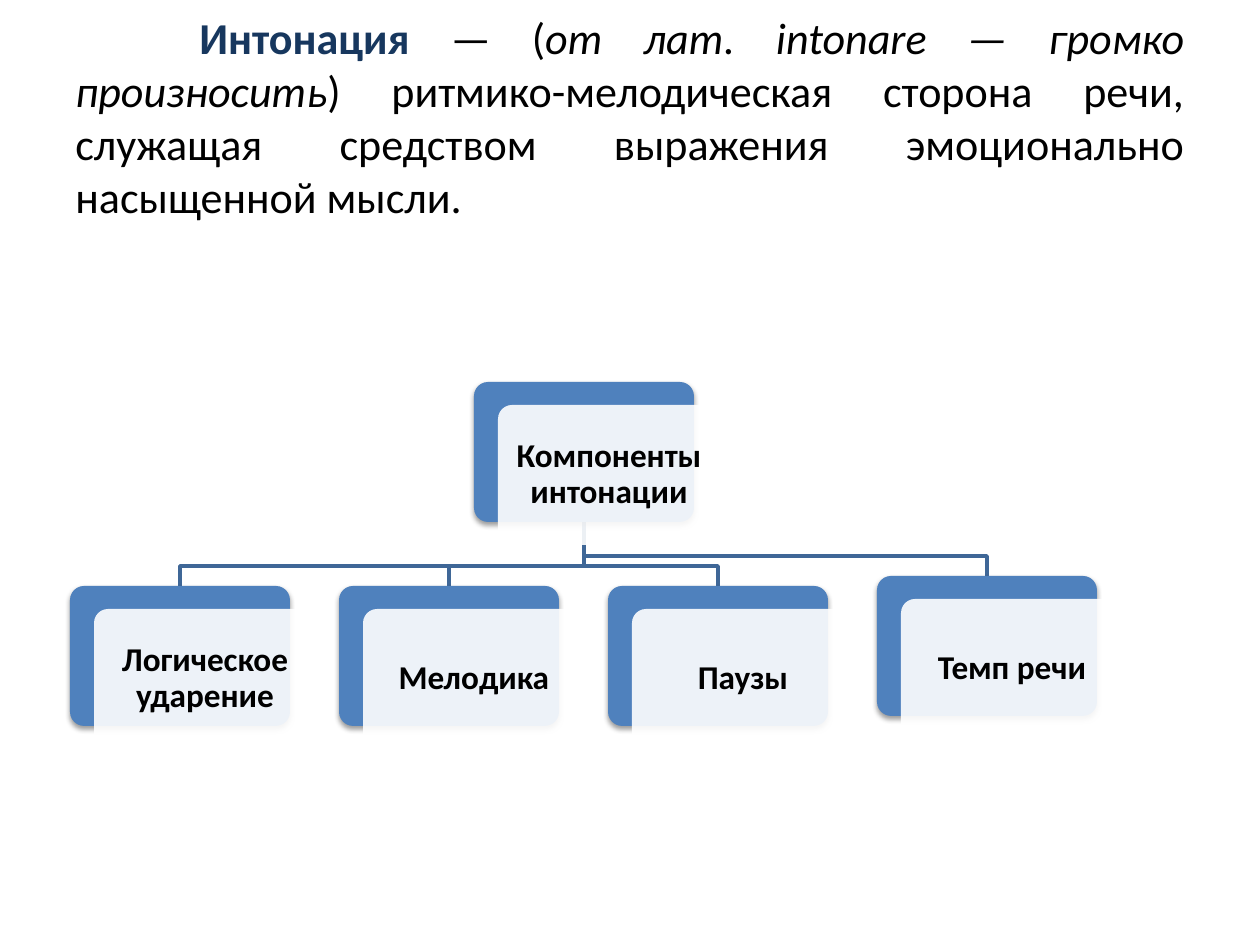
from dataclasses import dataclass

from pptx import Presentation
from pptx.dml.color import RGBColor
from pptx.enum.shapes import MSO_SHAPE
from pptx.enum.text import MSO_ANCHOR, PP_ALIGN
from pptx.oxml.ns import qn
from pptx.shapes.autoshape import Shape
from pptx.shapes.shapetree import GroupShapes
from pptx.slide import Slide
from pptx.util import Emu, Pt
from lxml import etree

ROUNDED = MSO_SHAPE.ROUNDED_RECTANGLE
MIDDLE = MSO_ANCHOR.MIDDLE
CENTER, JUSTIFY = PP_ALIGN.CENTER, PP_ALIGN.JUSTIFY

EMU_PER_PX = 914400 / 126
FONT = "Calibri"
COLORS = {
    "term": "17375E",
    "text": "000000",
    "card": "4F81BD",
    "face": "FFFFFF",
    "line": "3F6797",
    "shadow": "000000",
}
CARD_WIDTH, CARD_HEIGHT = 220, 140
BUS_GAP = 20


@dataclass
class Card:
    label: str
    left: int
    top: int

    @property
    def center(self) -> int:
        return self.left + CARD_WIDTH // 2


@dataclass
class Span:
    text: str
    color: str = "text"
    bold: bool = False
    italic: bool = False


DEFINITION = [
    Span("Интонация ", color="term", bold=True),
    Span("— ("),
    Span("от лат. intonare — громко произносить", italic=True),
    Span(") ритмико-мелодическая сторона речи, служащая средством "
         "выражения эмоционально насыщенной мысли."),
]
ROOT = Card("Компоненты интонации", 474, 382)
BRANCHES = [
    Card(label, 70 + 269 * index, top)
    for index, (label, top) in enumerate([
        ("Логическое ударение", 586),
        ("Мелодика", 586),
        ("Паузы", 586),
        ("Темп речи", 576),
    ])
]


def px(length: int) -> Emu:
    return Emu(round(length * EMU_PER_PX))


def color(name: str) -> RGBColor:
    return RGBColor.from_string(COLORS[name])


def add_definition(page: Slide) -> None:
    box = page.shapes.add_textbox(px(63), px(38), px(1134), px(157))
    frame = box.text_frame
    frame.word_wrap = True
    frame.vertical_anchor = MIDDLE
    para = frame.paragraphs[0]
    para.alignment = JUSTIFY
    para._p.get_or_add_pPr().set("indent", str(px(124)))
    para.font.name, para.font.size = FONT, Pt(25.2)
    for span in DEFINITION:
        run = para.add_run()
        run.text = span.text
        run.font.bold, run.font.italic = span.bold, span.italic
        run.font.color.rgb = color(span.color)


def add_branch_line(shapes: GroupShapes, start: Card, end: Card) -> None:
    bus = end.top - BUS_GAP
    builder = shapes.build_freeform(start.center, start.top + CARD_HEIGHT, scale=EMU_PER_PX)
    builder.add_line_segments(
        [(start.center, bus), (end.center, bus), (end.center, end.top)], close=False)
    line = builder.convert_to_shape()
    line.shadow.inherit = False
    line.fill.background()
    line.line.color.rgb = color("line")
    line.line.width = Pt(2)


def add_panel(shapes: GroupShapes, left: int, top: int, fill: str) -> Shape:
    panel = shapes.add_shape(ROUNDED, px(left), px(top), px(CARD_WIDTH), px(CARD_HEIGHT))
    panel.adjustments[0] = 0.1
    panel.shadow.inherit = False
    panel.fill.solid()
    panel.fill.fore_color.rgb = color(fill)
    panel.line.fill.background()
    return panel


def add_shadow(panel: Shape) -> None:
    effects = panel._element.spPr.find(qn("a:effectLst"))
    shadow = etree.SubElement(effects, qn("a:outerShdw"), blurRad=str(Pt(3.1)),
                              dist=str(Pt(1.6)), dir="5400000", rotWithShape="0")
    tint = etree.SubElement(shadow, qn("a:srgbClr"), val=COLORS["shadow"])
    etree.SubElement(tint, qn("a:alpha"), val="38000")


def add_card(shapes: GroupShapes, card: Card) -> None:
    add_shadow(add_panel(shapes, card.left, card.top, "card"))

    # Translucent face, shifted down and right
    face = add_panel(shapes, card.left + 24, card.top + 23, "face")
    tint = face._element.spPr.find(qn("a:solidFill"))[0]
    etree.SubElement(tint, qn("a:alpha"), val="90000")

    # Label
    box = shapes.add_textbox(px(card.left + 29), px(card.top + 27), px(212), px(131))
    frame = box.text_frame
    frame.word_wrap = True
    frame.vertical_anchor = MIDDLE
    frame.margin_left = frame.margin_right = px(10)
    frame.margin_top = frame.margin_bottom = px(10)
    para = frame.paragraphs[0]
    para.text = card.label
    para.alignment = CENTER
    para.line_spacing = 0.9
    para.font.name, para.font.size, para.font.bold = FONT, Pt(19), True
    para.font.color.rgb = color("text")


def main() -> None:
    deck = Presentation()
    deck.slide_width, deck.slide_height = px(1260), px(945)
    page = deck.slides.add_slide(deck.slide_layouts[6])

    add_definition(page)

    # Tree of components: lines lie behind the cards
    tree = page.shapes.add_group_shape().shapes
    for branch in reversed(BRANCHES):
        add_branch_line(tree, ROOT, branch)
    for card in [ROOT, *BRANCHES]:
        add_card(tree, card)

    deck.save("out.pptx")


if __name__ == "__main__":
    main()
